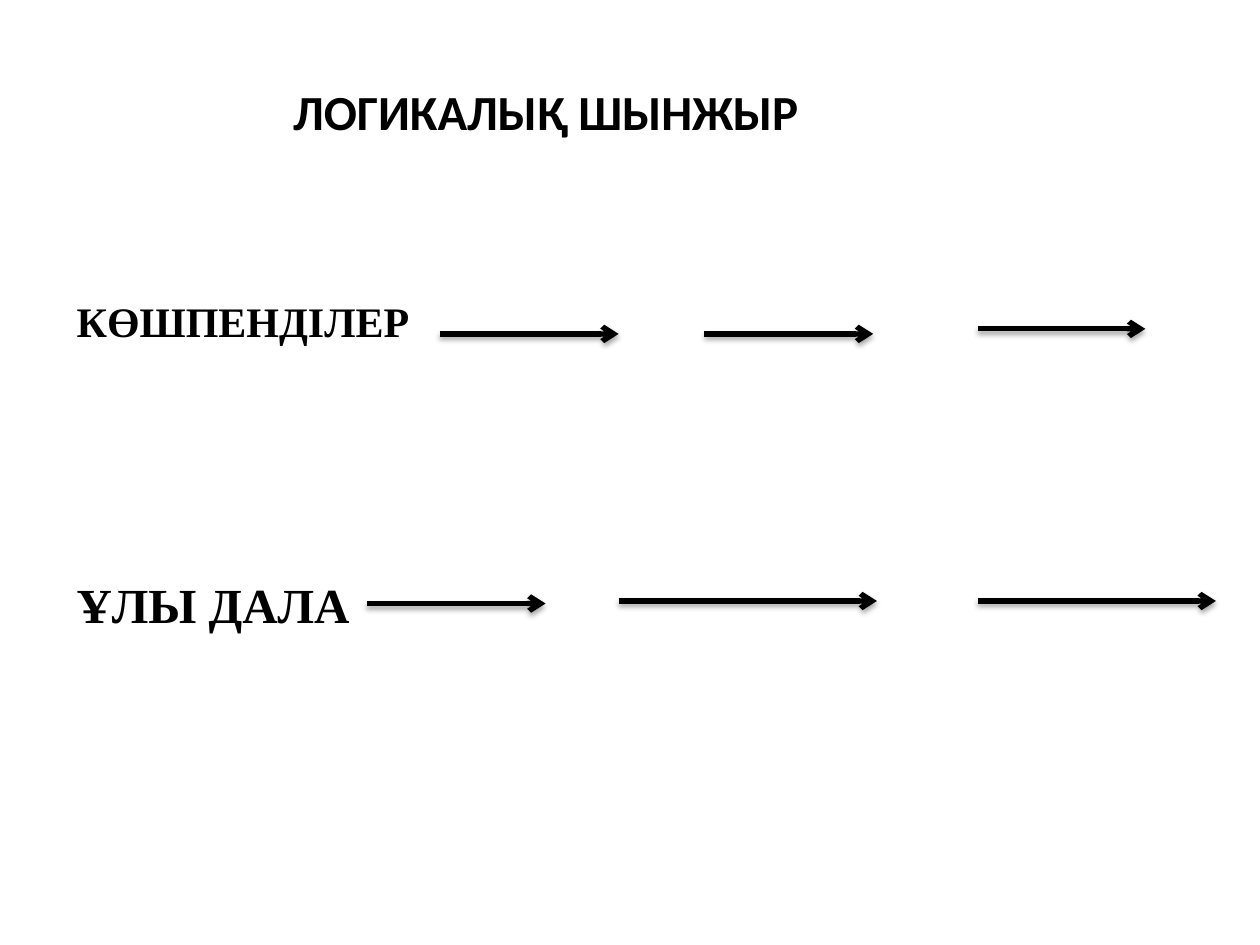
from lxml.etree import SubElement
from pptx import Presentation
from pptx.dml.color import RGBColor
from pptx.enum.shapes import MSO_CONNECTOR
from pptx.enum.text import MSO_ANCHOR, PP_ALIGN
from pptx.oxml.ns import qn
from pptx.util import Inches, Pt

COLUMNS, ROWS = 100, 75


def colour(value):
    return RGBColor.from_string(value)


class ChainSlide:
    """Style and current slide; lengths are columns and rows of the grid."""
    ink = "000000"
    heading_font = "Calibri"
    label_font = "Times New Roman"

    def __init__(self, deck):
        self.column = deck.slide_width / COLUMNS
        self.row = deck.slide_height / ROWS
        self.slide = deck.slides.add_slide(deck.slide_layouts[5])

    def place(self, left, top, width, height):
        return (round(left * self.column), round(top * self.row),
                round(width * self.column), round(height * self.row))

    def style_text(self, box, text, font, size, align):
        frame = box.text_frame
        frame.word_wrap = True
        frame.vertical_anchor = MSO_ANCHOR.TOP
        frame.text = text
        para = frame.paragraphs[0]
        para.alignment = align
        for span in para.runs:
            span.font.name = font
            span.font.size = Pt(size)
            span.font.bold = True
            span.font.color.rgb = colour(self.ink)

    def title(self, text, left, top, width, height, size):
        box = self.slide.shapes.title
        box.left, box.top, box.width, box.height = self.place(left, top, width, height)
        self.style_text(box, text, self.heading_font, size, PP_ALIGN.CENTER)

    def label(self, text, left, top, width, height, size):
        box = self.slide.shapes.add_textbox(*self.place(left, top, width, height))
        self.style_text(box, text, self.label_font, size, PP_ALIGN.LEFT)

    def arrow(self, start, end, level):
        left, top, right, bottom = self.place(start, level, end, level)
        arrow = self.slide.shapes.add_connector(
            MSO_CONNECTOR.STRAIGHT, left, top, right, bottom)
        arrow.line.color.rgb = colour(self.ink)
        arrow.line.width = Pt(3)
        properties = arrow.element.spPr
        SubElement(properties.find(qn("a:ln")), qn("a:tailEnd"), type="arrow")
        effects = SubElement(properties, qn("a:effectLst"))
        shadow = SubElement(effects, qn("a:outerShdw"), blurRad=str(Pt(3.1)),
                            dist=str(Pt(1.8)), dir="5400000", rotWithShape="0")
        tint = SubElement(shadow, qn("a:srgbClr"), val=self.ink)
        SubElement(tint, qn("a:alpha"), val="35000")


def main():
    deck = Presentation()
    deck.slide_width, deck.slide_height = Inches(10), Inches(7.5)
    chain = ChainSlide(deck)
    chain.title("ЛОГИКАЛЫҚ ШЫНЖЫР", 5.1, 6, 76.4, 5.7, 28)

    # Label, its top, width and size, then the (start, end, level) of each arrow
    chains = [
        ("КӨШПЕНДІЛЕР", 23, 29.5, 24,
         [(34.9, 49.1, 26.5), (55.9, 69.3, 26.5), (77.6, 90.9, 26.1)]),
        ("ҰЛЫ ДАЛА", 45.1, 24, 28,
         [(29.1, 43.3, 47.9), (49.1, 69.6, 47.7), (77.6, 96.5, 47.7)]),
    ]
    for text, top, width, size, arrows in chains:
        chain.label(text, 5.1, top, width, 5.3, size)
        for start, end, level in arrows:
            chain.arrow(start, end, level)
    deck.save("out.pptx")


if __name__ == "__main__":
    main()
